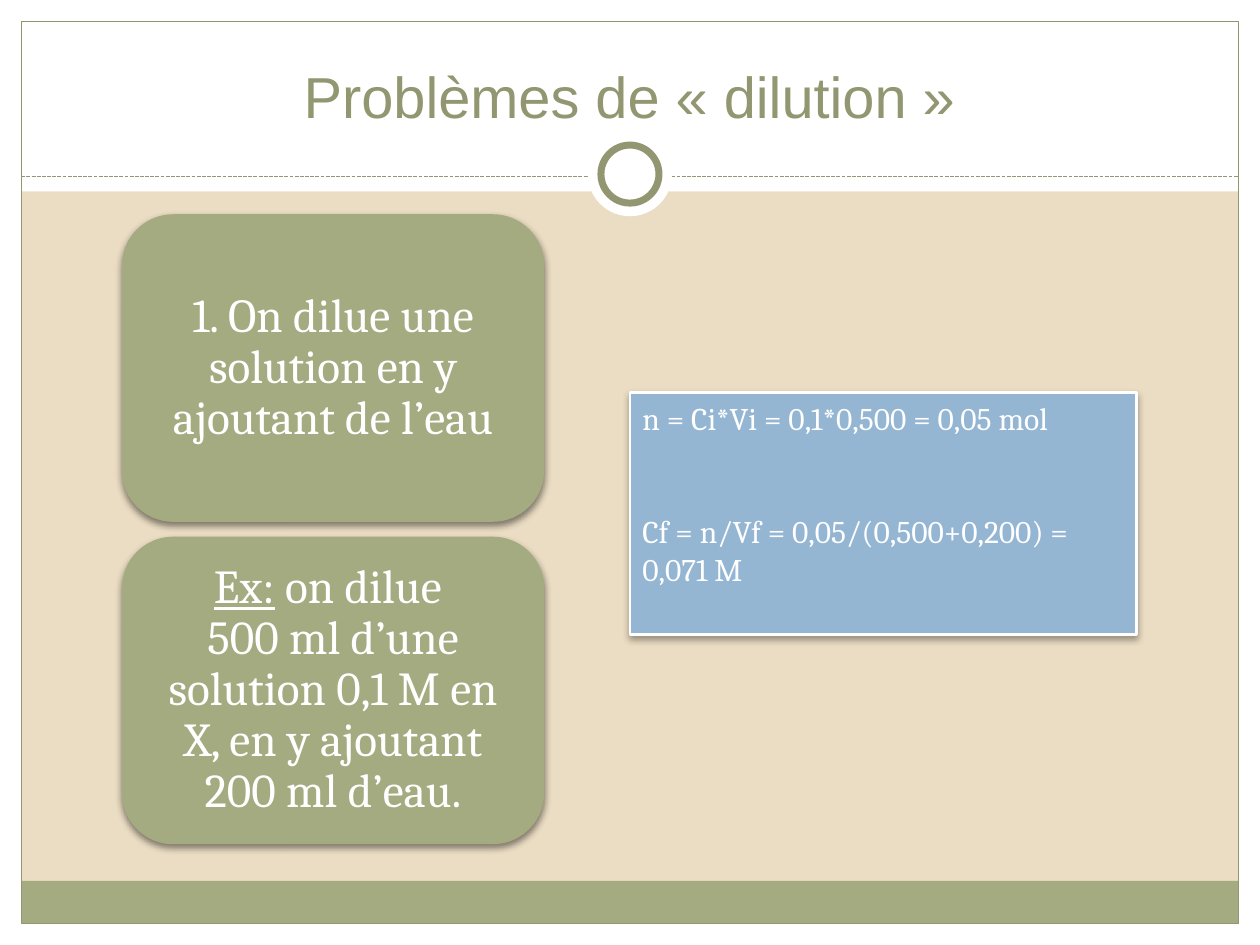
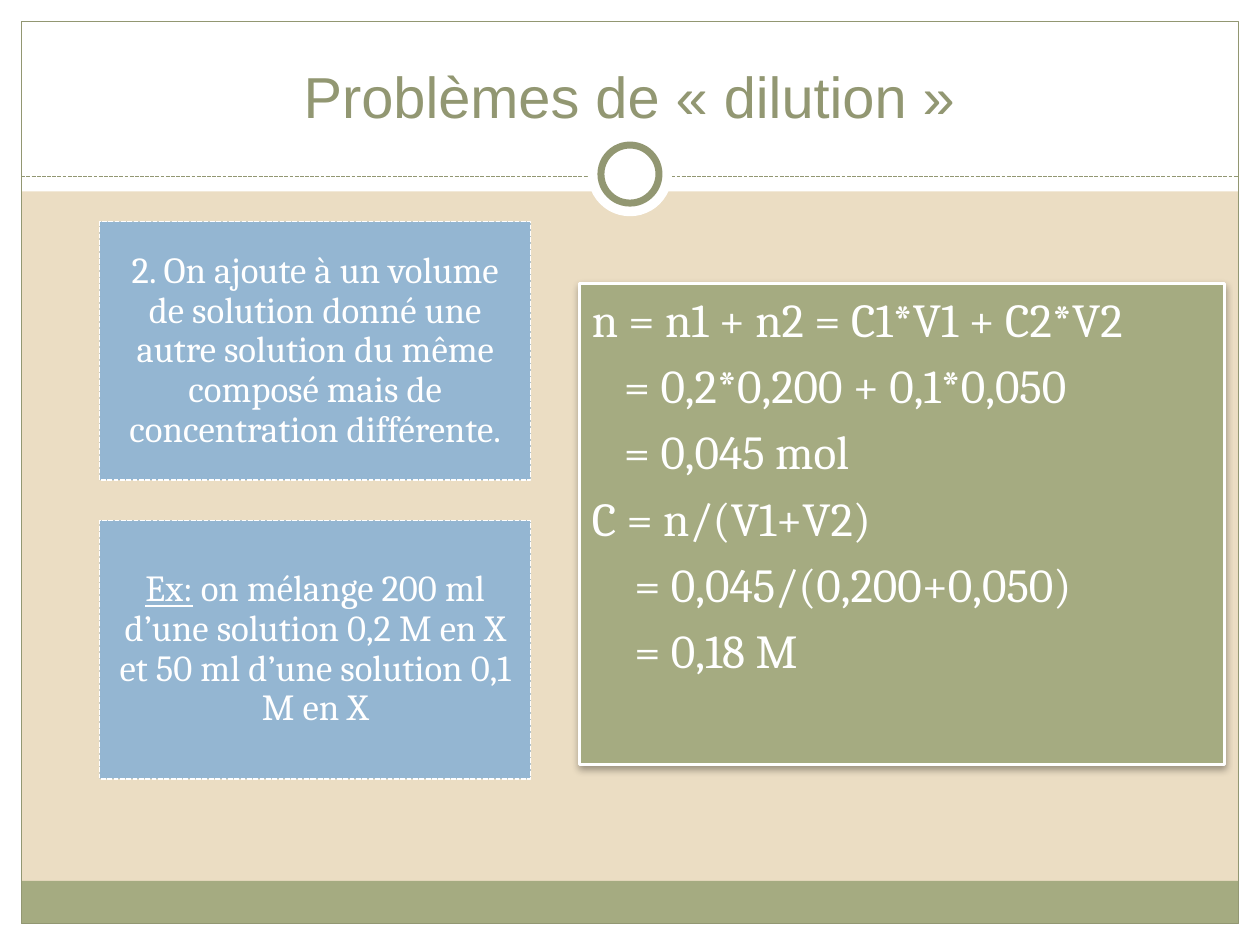
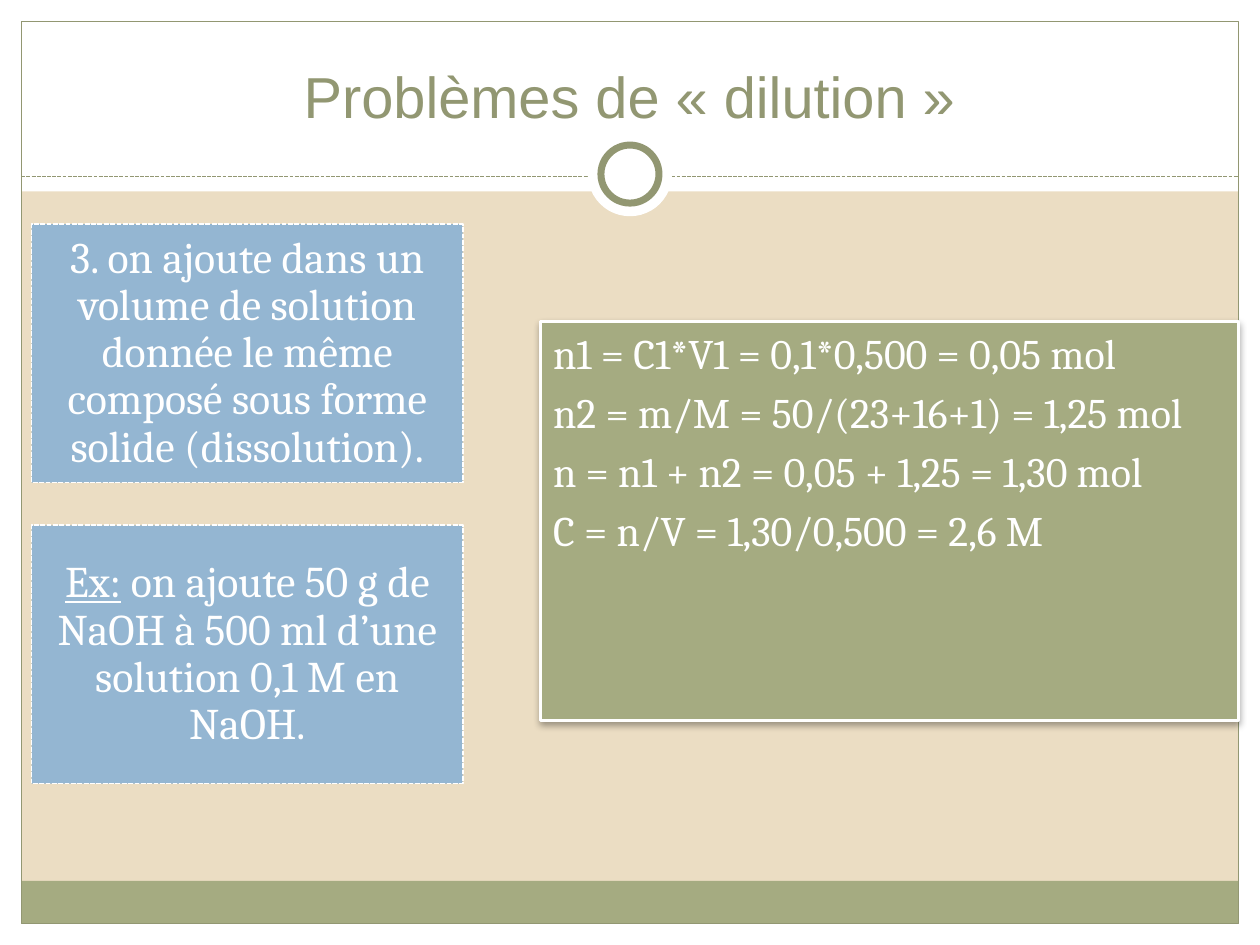
from collections import namedtuple
from dataclasses import dataclass

from lxml.etree import SubElement
from pptx import Presentation
from pptx.dml.color import RGBColor
from pptx.enum.dml import MSO_LINE
from pptx.enum.shapes import MSO_CONNECTOR, MSO_SHAPE
from pptx.enum.text import MSO_ANCHOR, MSO_AUTO_SIZE, PP_ALIGN
from pptx.oxml.ns import qn
from pptx.util import Cm, Pt

Box = namedtuple("Box", "left top width height")  # centimetres


@dataclass(frozen=True)
class Theme:
    sand: str = "EBDDC3"
    white: str = "FFFFFF"
    sage: str = "A5AB81"
    olive: str = "929772"
    blue: str = "94B6D2"
    title_font: str = "Arial"
    body_font: str = "Cambria"
    title_size: float = 33
    large_size: float = 27
    medium_size: float = 25
    answer_size: float = 24
    small_size: float = 21
    note_size: float = 18


THEME = Theme()
SLIDE = Box(0, 0, 25.4, 19.05)
MARGIN = 0.43
HEADER_HEIGHT = 3.86
FOOTER_HEIGHT = 0.86
TITLE = "Problèmes de « dilution »"
TITLE_BOX = Box(0.84, 0.64, 23.7, 2.11)


def lengths(box):
    return [Cm(value) for value in box]


def add_block(slide, box, kind=MSO_SHAPE.RECTANGLE, fill=None, line=None,
              line_width=0.75, dashed=False, shadow=None):
    """Add a preset shape; shadow is its opacity in percent."""
    shape = slide.shapes.add_shape(kind, *lengths(box))
    shape.shadow.inherit = False
    if fill:
        shape.fill.solid()
        shape.fill.fore_color.rgb = RGBColor.from_string(fill)
    else:
        shape.fill.background()
    if line:
        shape.line.color.rgb = RGBColor.from_string(line)
        shape.line.width = Pt(line_width)
        if dashed:
            shape.line.dash_style = MSO_LINE.SQUARE_DOT
    else:
        shape.line.fill.background()
    if shadow:
        effects = shape.element.spPr.find(qn("a:effectLst"))
        outer = SubElement(effects, qn("a:outerShdw"), blurRad=str(Pt(4)),
                           dist=str(Pt(2)), dir="5400000", rotWithShape="0")
        color = SubElement(outer, qn("a:srgbClr"), val="000000")
        SubElement(color, qn("a:alpha"), val=str(shadow * 1000))
    return shape


def add_text(frame, text, size, font=THEME.body_font, color=THEME.white,
             align=PP_ALIGN.LEFT, lead="", indent=0, space_before=0, line_spacing=1.0):
    """Add a paragraph, opened by an underlined lead if one is given."""
    paragraph = frame.paragraphs[0]
    if paragraph.runs:
        paragraph = frame.add_paragraph()
    paragraph.alignment = align
    paragraph.space_before = Pt(space_before)
    paragraph.line_spacing = line_spacing
    if indent:
        paragraph._p.get_or_add_pPr().set("marL", str(Cm(indent)))
    for part, underlined in ((lead, True), (text, False)):
        if part:
            run = paragraph.add_run()
            run.text = part
            run.font.name = font
            run.font.size = Pt(size)
            run.font.color.rgb = RGBColor.from_string(color)
            run.font.underline = underlined


def set_frame(frame, anchor, inset_x=0.25, inset_y=0.13):
    frame.word_wrap = True
    frame.auto_size = MSO_AUTO_SIZE.NONE
    frame.vertical_anchor = anchor
    frame.margin_left = frame.margin_right = Cm(inset_x)
    frame.margin_top = frame.margin_bottom = Cm(inset_y)


def add_ring(slide, box):
    center_x, center_y = box.left + box.width / 2, HEADER_HEIGHT - 0.35
    for diameter, line in ((1.7, None), (1.17, THEME.olive)):
        disc = Box(center_x - diameter / 2, center_y - diameter / 2, diameter, diameter)
        add_block(slide, disc, MSO_SHAPE.OVAL, THEME.white, line, line_width=4)


def add_frame(slide, box):
    """Draw the white surround, bottom band, outline, rule and ring."""
    right, bottom = box.width - MARGIN, box.height - MARGIN
    inner_width = right - MARGIN
    for edge in (Box(0, bottom, box.width, MARGIN),
                 Box(0, 0, box.width, HEADER_HEIGHT),
                 Box(0, 0, MARGIN, box.height),
                 Box(right, 0, MARGIN, box.height)):
        add_block(slide, edge, fill=THEME.white)
    add_block(slide, Box(MARGIN, bottom - FOOTER_HEIGHT, inner_width, FOOTER_HEIGHT),
              fill=THEME.sage)
    add_block(slide, Box(MARGIN, MARGIN, inner_width, bottom - MARGIN), line=THEME.olive)
    rule_y = Cm(HEADER_HEIGHT - 0.3)
    rule = slide.shapes.add_connector(MSO_CONNECTOR.STRAIGHT, Cm(MARGIN), rule_y,
                                      Cm(right), rule_y)
    rule.line.color.rgb = RGBColor.from_string(THEME.olive)
    rule.line.width = Pt(0.75)
    rule.line.dash_style = MSO_LINE.SQUARE_DOT
    SubElement(rule.element.spPr, qn("a:effectLst"))
    add_ring(slide, box)


def share_frame(slide):
    """Draw the frame and move it to the layout, which all slides use."""
    layout = slide.slide_layout
    layout.background.fill.solid()
    layout.background.fill.fore_color.rgb = RGBColor.from_string(THEME.sand)
    own_shapes = len(slide.shapes)
    add_frame(slide, SLIDE)
    for number, shape in enumerate(list(slide.shapes)[own_shapes:], start=100):
        shape.element.xpath(".//p:cNvPr")[0].set("id", str(number))
        layout.shapes.element.append(shape.element)


def add_titled_slide(presentation):
    slide = presentation.slides.add_slide(presentation.slide_layouts[5])
    title = slide.shapes.title
    title.left, title.top, title.width, title.height = lengths(TITLE_BOX)
    set_frame(title.text_frame, MSO_ANCHOR.BOTTOM)
    add_text(title.text_frame, TITLE, THEME.title_size, font=THEME.title_font,
             color=THEME.olive, align=PP_ALIGN.CENTER)
    return slide


def add_cards(slide, box, cards, size, gap, inset=(0.25, 0.25), **style):
    """Stack equal cards; each is a list of (lead, text) paragraphs."""
    height = (box.height - gap * (len(cards) - 1)) / len(cards)
    for index, paragraphs in enumerate(cards):
        top = box.top + index * (height + gap)
        card = add_block(slide, Box(box.left, top, box.width, height), **style)
        set_frame(card.text_frame, MSO_ANCHOR.MIDDLE, *inset)
        for lead, text in paragraphs:
            add_text(card.text_frame, text, size, lead=lead,
                     align=PP_ALIGN.CENTER, line_spacing=0.9)


def add_answer(slide, box, steps, size, fill, space_before):
    """Add the calculation panel; each step is (indent, text)."""
    panel = add_block(slide, box, fill=fill, line=THEME.white, line_width=1.57, shadow=35)
    set_frame(panel.text_frame, MSO_ANCHOR.TOP)
    for indent, text in steps:
        add_text(panel.text_frame, text, size, indent=indent, space_before=space_before)


def build_water_slide(slide):
    add_cards(slide, Box(2.46, 4.32, 8.51, 12.7), [
        [("", "1. On dilue une solution en y ajoutant de l’eau")],
        [("Ex:", " on dilue "),
         ("", "500 ml d’une solution 0,1 M en X, en y ajoutant 200 ml d’eau.")],
    ], THEME.large_size, gap=0.3, inset=(0.28, 0.15),
        kind=MSO_SHAPE.ROUNDED_RECTANGLE, fill=THEME.sage, shadow=45)
    panel = Box(12.7, 7.92, 10.21, 4.88)
    steps = [(0, "n = Ci*Vi = 0,1*0,500 = 0,05 mol"),
             (0, "Cf = n/Vf = 0,05/(0,500+0,200) = 0,071 M")]
    add_answer(slide, panel, steps, THEME.note_size, THEME.blue, space_before=43)


def build_mixture_slide(slide, cards_box, cards, cards_size, gap, panel, steps, steps_size):
    add_cards(slide, cards_box, cards, cards_size, gap, fill=THEME.blue,
              line=THEME.white, line_width=0.9, dashed=True)
    add_answer(slide, panel, steps, steps_size, THEME.sage, space_before=0.2 * steps_size)


def main():
    presentation = Presentation()
    presentation.slide_width, presentation.slide_height = Cm(SLIDE.width), Cm(SLIDE.height)
    water, mixture, solid = [add_titled_slide(presentation) for _ in range(3)]
    share_frame(water)

    build_water_slide(water)
    build_mixture_slide(
        mixture, Box(2.01, 4.47, 8.69, 11.23), [
            [("", "2. On ajoute à un volume de solution donné une autre solution "
                  "du même composé mais de concentration différente.")],
            [("Ex:", " on mélange 200 ml d’une solution 0,2 M en X "
                     "et 50 ml d’une solution 0,1 M en X")],
        ], THEME.small_size, 0.81,
        Box(11.68, 5.72, 13, 9.7), [
            (0, "n = n1 + n2 = C1*V1 + C2*V2"),
            (0.65, "= 0,2*0,200 + 0,1*0,050"),
            (0.65, "= 0,045 mol"),
            (0, "C = n/(V1+V2)"),
            (0.86, "= 0,045/(0,200+0,050)"),
            (0.86, "= 0,18 M"),
        ], THEME.large_size)
    build_mixture_slide(
        solid, Box(0.64, 4.52, 8.69, 11.28), [
            [("", "3. on ajoute dans un volume de solution donnée le même composé "
                  "sous forme solide (dissolution).")],
            [("Ex:", " on ajoute 50 g de NaOH à 500 ml d’une solution 0,1 M en NaOH.")],
        ], THEME.medium_size, 0.86,
        Box(10.9, 6.48, 14.07, 8.05), [
            (0, "n1 = C1*V1 = 0,1*0,500 = 0,05 mol"),
            (0, "n2 = m/M = 50/(23+16+1) = 1,25 mol"),
            (0, "n = n1 + n2 = 0,05 + 1,25 = 1,30 mol"),
            (0, "C = n/V = 1,30/0,500 = 2,6 M"),
        ], THEME.answer_size)
    presentation.save("out.pptx")


if __name__ == "__main__":
    main()
